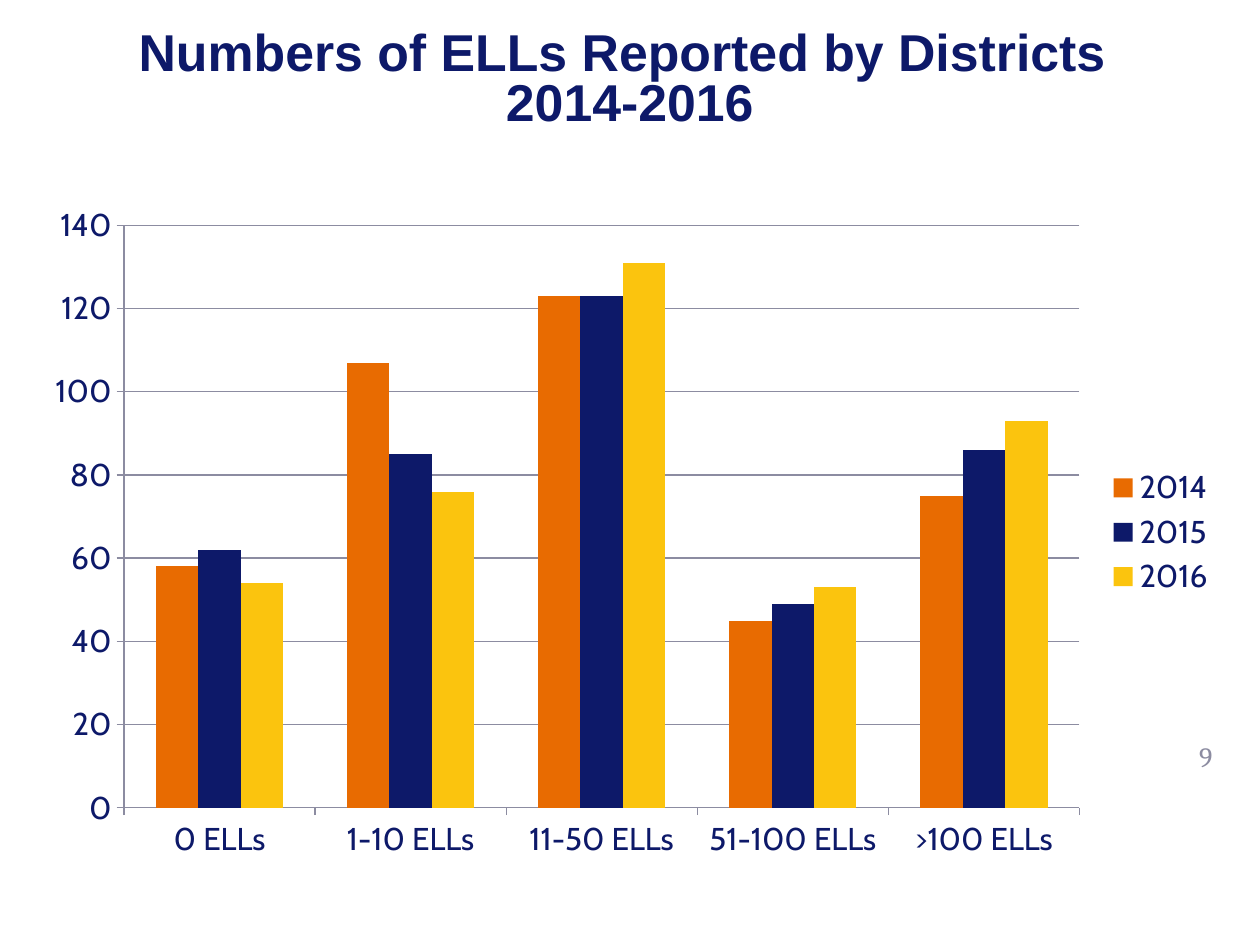
from pptx import Presentation
from pptx.chart.data import CategoryChartData
from pptx.dml.color import RGBColor
from pptx.enum.chart import XL_CHART_TYPE, XL_LEGEND_POSITION, XL_TICK_MARK
from pptx.enum.shapes import MSO_SHAPE
from pptx.enum.text import MSO_ANCHOR, PP_ALIGN
from pptx.util import Inches, Pt

CLUSTERED = XL_CHART_TYPE.COLUMN_CLUSTERED
LEGEND_RIGHT = XL_LEGEND_POSITION.RIGHT
TICK_OUTSIDE = XL_TICK_MARK.OUTSIDE
TICK_NONE = XL_TICK_MARK.NONE
RECTANGLE = MSO_SHAPE.RECTANGLE
MIDDLE = MSO_ANCHOR.MIDDLE
CENTER = PP_ALIGN.CENTER

NAVY = RGBColor(0x0D, 0x19, 0x69)
ORANGE = RGBColor(0xE8, 0x6B, 0x01)
YELLOW = RGBColor(0xFB, 0xC4, 0x0E)
GRAY = RGBColor(0x8C, 0x8C, 0xA1)
WHITE = RGBColor(0xFF, 0xFF, 0xFF)

TITLE_LINES = ["Numbers of ELLs Reported by Districts ", "2014-2016"]
DISTRICT_SIZES = ["0 ELLs", "1-10 ELLs", "11-50 ELLs", "51-100 ELLs", ">100 ELLs"]
YEARS = [
    ("2014", [58, 107, 123, 45, 75], ORANGE),
    ("2015", [62, 85, 123, 49, 86], NAVY),
    ("2016", [54, 76, 131, 53, 93], YELLOW),
]


def add_centered_run(paragraph, text, size, family, color, bold=False):
    paragraph.alignment = CENTER
    run = paragraph.add_run()
    run.text = text
    run.font.size = Pt(size)
    run.font.name = family
    run.font.color.rgb = color
    run.font.bold = bold


def add_title(slide, left, top, width, height):
    banner = slide.shapes.add_shape(RECTANGLE, left, top, width, height)
    banner.shadow.inherit = False
    banner.fill.solid()
    banner.fill.fore_color.rgb = WHITE
    banner.line.fill.background()
    frame = banner.text_frame
    frame.word_wrap = True
    frame.vertical_anchor = MIDDLE
    for index, line in enumerate(TITLE_LINES):
        paragraph = frame.add_paragraph() if index else frame.paragraphs[0]
        paragraph.line_spacing = 0.8
        add_centered_run(paragraph, line, 29.6, "Arial", NAVY, bold=True)


def add_district_chart(slide, left, top, width, height):
    counts = CategoryChartData()
    counts.categories = DISTRICT_SIZES
    for year, values, _ in YEARS:
        counts.add_series(year, values)
    chart = slide.shapes.add_chart(CLUSTERED, left, top, width, height, counts).chart
    chart.has_title = False
    chart.font.size = Pt(18)
    chart.font.name = "Cabin"
    chart.font.color.rgb = NAVY
    chart.has_legend = True
    chart.legend.position = LEGEND_RIGHT
    chart.legend.include_in_layout = False

    plot = chart.plots[0]
    plot.vary_by_categories = False
    plot.gap_width = 150
    plot.overlap = 0
    for series, (_, _, color) in zip(plot.series, YEARS):
        series.format.fill.solid()
        series.format.fill.fore_color.rgb = color
        series.invert_if_negative = False

    for axis in (chart.category_axis, chart.value_axis):
        axis.major_tick_mark = TICK_OUTSIDE
        axis.minor_tick_mark = TICK_NONE
        axis.format.line.color.rgb = GRAY
        axis.format.line.width = Pt(0.75)
    count_axis = chart.value_axis
    count_axis.minimum_scale = 0
    count_axis.maximum_scale = 140
    count_axis.major_unit = 20
    count_axis.has_major_gridlines = True
    gridline = count_axis.major_gridlines.format.line
    gridline.color.rgb = GRAY
    gridline.width = Pt(0.75)


def add_page_number(slide, left, top, width, height):
    frame = slide.shapes.add_textbox(left, top, width, height).text_frame
    frame.word_wrap = True
    frame.vertical_anchor = MIDDLE
    add_centered_run(frame.paragraphs[0], "9", 16, "Cambria", GRAY)


def main():
    deck = Presentation()
    deck.slide_width = Inches(10)
    deck.slide_height = Inches(7.5)
    slide = deck.slides.add_slide(deck.slide_layouts[6])
    margin = Inches(0.25)
    content_width = deck.slide_width - 2 * margin
    add_page_number(slide, Inches(9.28), Inches(5.75), Inches(0.58), Inches(0.5))
    add_district_chart(slide, margin, Inches(1.53), content_width, Inches(5.39))
    add_title(slide, margin, Inches(0.17), content_width, Inches(0.95))
    deck.save("out.pptx")


if __name__ == "__main__":
    main()
